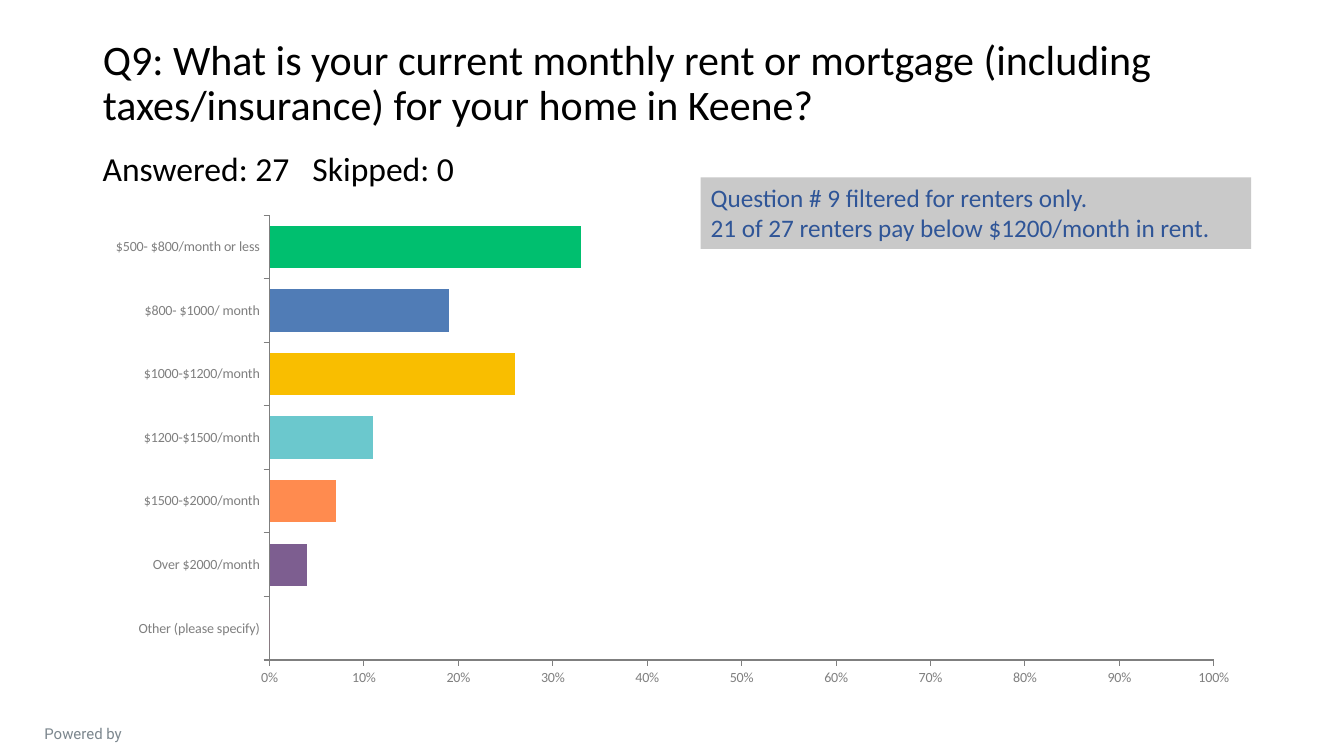
from lxml.etree import SubElement
from pptx import Presentation
from pptx.chart.data import CategoryChartData
from pptx.dml.color import RGBColor
from pptx.enum.chart import XL_CHART_TYPE, XL_TICK_LABEL_POSITION, XL_TICK_MARK
from pptx.enum.shapes import MSO_SHAPE
from pptx.enum.text import MSO_ANCHOR, PP_ALIGN
from pptx.oxml.ns import qn
from pptx.util import Inches, Pt

# Content
TITLE = ("Q9: What is your current monthly rent or mortgage (including "
         "taxes/insurance) for your home in Keene?")
RESPONSES = ["Answered: 27\tSkipped: 0"]
NOTE = ["Question # 9 filtered for renters only.",
        "21 of 27 renters pay below $1200/month in rent."]
FOOTER = ["Powered by"]
RENT_BANDS = [  # label, share of answers, bar colour
    ("$500- $800/month or less", 0.33, "00BF6F"),
    ("$800- $1000/ month", 0.19, "507CB6"),
    ("$1000-$1200/month", 0.26, "F9BE00"),
    ("$1200-$1500/month", 0.11, "6BC8CD"),
    ("$1500-$2000/month", 0.07, "FF8B4F"),
    ("Over $2000/month", 0.04, "7D5E90"),
    ("Other (please specify)", 0, "D25F90"),
]

THEME = {
    "title": {"name": "Calibri", "size": 30, "color": "000000"},
    "responses": {"name": "Calibri", "size": 24, "color": "000000"},
    "note": {"name": "Calibri", "size": 18, "color": "2F5597"},
    "footer": {"name": "Roboto", "size": 10.7, "color": "7C878E"},
    "chart": {"name": "Calibri", "size": 18, "color": "000000"},
    "axis": {"name": "Calibri", "size": 10, "color": "7F7F7F"},
    "note_fill": "C9C9C9",
}
LEFT, WIDTH = 0.92, 11.5


def rgb(value):
    return RGBColor.from_string(value)


def style_font(font, role):
    style = THEME[role]
    font.name = style["name"]
    font.size = Pt(style["size"])
    font.color.rgb = rgb(style["color"])


def place(shape, left, top, width, height):
    box = {"left": left, "top": top, "width": width, "height": height}
    for name, value in box.items():
        setattr(shape, name, Inches(value))


def write(shape, lines, role, spacing=None, align=PP_ALIGN.LEFT,
          anchor=MSO_ANCHOR.TOP, tab=None):
    frame = shape.text_frame
    frame.word_wrap = True
    frame.vertical_anchor = anchor
    for index, line in enumerate(lines):
        paragraph = frame.paragraphs[0] if index == 0 else frame.add_paragraph()
        paragraph.alignment = align
        paragraph.line_spacing = spacing
        if tab:
            properties = paragraph._p.get_or_add_pPr()
            tabs = SubElement(properties, qn("a:tabLst"))
            SubElement(tabs, qn("a:tab"), pos=str(Inches(tab)), algn="l")
        run = paragraph.add_run()
        run.text = line
        style_font(run.font, role)


presentation = Presentation()
presentation.slide_width = Inches(13.33)
presentation.slide_height = Inches(7.5)
slide = presentation.slides.add_slide(presentation.slide_layouts[5])
shapes = slide.shapes

# Title
title = shapes.title
place(title, LEFT, 0.32, WIDTH, 1.02)
write(title, [TITLE], "title", spacing=0.9, anchor=MSO_ANCHOR.BOTTOM)

# Response counts
responses = shapes.add_textbox(0, 0, 0, 0)
place(responses, LEFT, 1.46, WIDTH, 0.46)
write(responses, RESPONSES, "responses", spacing=0.9, tab=2.08)

# Bar chart
labels, shares, colors = zip(*RENT_BANDS)
chart_data = CategoryChartData(number_format="0%")
chart_data.categories = labels
chart_data.add_series("Series 1", shares)
chart_frame = shapes.add_chart(
    XL_CHART_TYPE.BAR_CLUSTERED, Inches(LEFT), Inches(2.04),
    Inches(WIDTH), Inches(4.86), chart_data)
chart = chart_frame.chart
chart.has_title = False
chart.has_legend = False
style_font(chart.font, "chart")

plot = chart.plots[0]
plot_format = {"gap_width": 50, "overlap": 100, "vary_by_categories": False}
for name, value in plot_format.items():
    setattr(plot, name, value)
series = plot.series[0]
for index, color in enumerate(colors):
    fill = series.points[index].format.fill
    fill.solid()
    fill.fore_color.rgb = rgb(color)

# Axes
axis_formats = [
    (chart.category_axis, {"reverse_order": True,
                           "tick_label_position": XL_TICK_LABEL_POSITION.LOW}),
    (chart.value_axis, {"minimum_scale": 0, "maximum_scale": 1, "major_unit": 0.1}),
]
for axis, settings in axis_formats:
    settings = {**settings, "has_major_gridlines": False,
                "major_tick_mark": XL_TICK_MARK.OUTSIDE,
                "minor_tick_mark": XL_TICK_MARK.NONE}
    for name, value in settings.items():
        setattr(axis, name, value)
    style_font(axis.tick_labels.font, "axis")
    axis.format.line.width = Pt(0.75)
    axis.format.line.color.rgb = rgb(THEME["axis"]["color"])
value_labels = chart.value_axis.tick_labels
value_labels.number_format = "0%"
value_labels.number_format_is_linked = False
# Keep the value axis at the bottom, below the last category
chart.value_axis._element.find(qn("c:crosses")).set("val", "max")

# Note on the filter
note = shapes.add_shape(MSO_SHAPE.RECTANGLE, 0, 0, 0, 0)
place(note, 6.95, 1.76, 5.46, 0.71)
note.shadow.inherit = False
note.fill.solid()
note.fill.fore_color.rgb = rgb(THEME["note_fill"])
note.line.fill.background()
write(note, NOTE, "note")

# Footer
footer = shapes.add_textbox(0, 0, 0, 0)
place(footer, 0.06, 7.12, 1.53, 0.23)
margins = {"margin_left": 0.13, "margin_top": 0.07,
           "margin_right": 0.13, "margin_bottom": 0.07}
for name, value in margins.items():
    setattr(footer.text_frame, name, Inches(value))
write(footer, FOOTER, "footer", align=PP_ALIGN.CENTER)

presentation.save("out.pptx")
